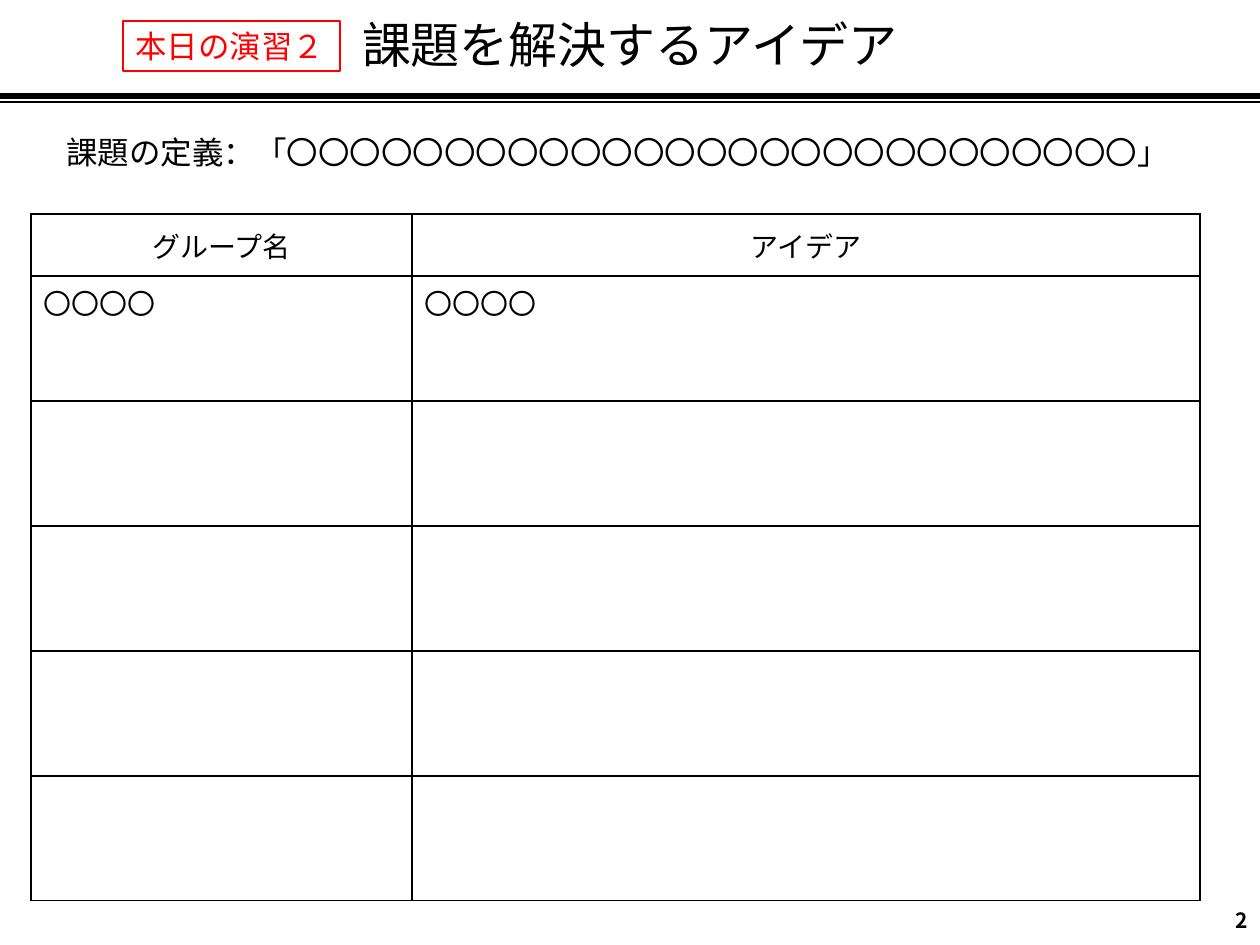
"""Build the exercise slide with a table of ideas from each group."""
import lxml.etree
import pptx
import pptx.dml.color
import pptx.enum.shapes
import pptx.enum.text
import pptx.oxml.ns
import pptx.util

SCALE = 914400 / 126
FONT = "Noto Sans CJK JP"
COLORS = {"ink": "000000", "accent": "FF0000"}
ALIGN = pptx.enum.text.PP_ALIGN
ANCHOR = pptx.enum.text.MSO_ANCHOR


def px(*lengths):
    return [pptx.util.Emu(round(length * SCALE)) for length in lengths]


def write(text_frame, text, size, color="ink", align=ALIGN.LEFT, bold=False):
    paragraph = text_frame.paragraphs[0]
    paragraph.alignment = align
    run = paragraph.add_run()
    run.text = text
    run.font.size = pptx.util.Pt(size)
    run.font.bold = bold
    run.font.color.rgb = pptx.dml.color.RGBColor.from_string(COLORS[color])
    run.font.name = FONT
    east_asian = lxml.etree.SubElement(run.font._element, pptx.oxml.ns.qn("a:ea"))
    east_asian.set("typeface", FONT)


presentation = pptx.Presentation()
presentation.slide_width, presentation.slide_height = px(1260, 945)
slide = presentation.slides.add_slide(presentation.slide_layouts[5])

title = slide.shapes.title
title.left, title.top, title.width, title.height = px(0, 0, 1260, 96)
title.text_frame.auto_size = pptx.enum.text.MSO_AUTO_SIZE.NONE
title.text_frame.vertical_anchor = ANCHOR.MIDDLE
write(title.text_frame, "課題を解決するアイデア", 28, align=ALIGN.CENTER)
title.text_frame.paragraphs[0].line_spacing = 0.9

page_number = slide.shapes.add_textbox(*px(1200, 895, 60, 50))
page_number.text_frame.word_wrap = True
page_number.text_frame.vertical_anchor = ANCHOR.MIDDLE
write(page_number.text_frame, "2", 12, align=ALIGN.RIGHT, bold=True)

for y, width in [(96, 3), (102, 1)]:
    rule = slide.shapes.add_connector(
        pptx.enum.shapes.MSO_CONNECTOR.STRAIGHT, *px(0, y, 1260, y))
    rule.line.color.rgb = pptx.dml.color.RGBColor.from_string(COLORS["ink"])
    rule.line.width = pptx.util.Pt(width)
    lxml.etree.SubElement(rule._element.spPr, pptx.oxml.ns.qn("a:effectLst"))

rows = [("グループ名", "アイデア"), ("〇〇〇〇", "〇〇〇〇")] + [("", "")] * 4
column_widths = px(381, 788)
row_heights = px(62, *[125] * 5)
table = slide.shapes.add_table(
    len(rows), 2, *px(31, 214), sum(column_widths), sum(row_heights)).table
table.first_row = False
table.horz_banding = False
for column, width in zip(table.columns, column_widths):
    column.width = width
for row, height in zip(table.rows, row_heights):
    row.height = height

for row_index, row_texts in enumerate(rows):
    for column_index, text in enumerate(row_texts):
        cell = table.cell(row_index, column_index)
        header = row_index == 0
        cell.vertical_anchor = ANCHOR.MIDDLE if header else ANCHOR.TOP
        if text:
            write(cell.text_frame, text, 16, align=ALIGN.CENTER if header else ALIGN.LEFT)
        properties = cell._tc.get_or_add_tcPr()
        for side in ("lnL", "lnR", "lnT", "lnB"):
            border = lxml.etree.SubElement(properties, pptx.oxml.ns.qn("a:" + side))
            border.set("w", str(pptx.util.Pt(1)))
            fill = lxml.etree.SubElement(border, pptx.oxml.ns.qn("a:solidFill"))
            color = lxml.etree.SubElement(fill, pptx.oxml.ns.qn("a:srgbClr"))
            color.set("val", COLORS["ink"])
        cell.fill.background()

definition = slide.shapes.add_textbox(*px(54, 127, 1171, 50))
definition.text_frame.word_wrap = True
write(definition.text_frame, "課題の定義：「〇〇〇〇〇〇〇〇〇〇〇〇〇〇〇〇〇〇〇〇〇〇〇〇〇〇〇」", 18)

exercise_label = slide.shapes.add_shape(
    pptx.enum.shapes.MSO_SHAPE.RECTANGLE, *px(123, 21, 217, 50))
exercise_label.shadow.inherit = False
exercise_label.fill.background()
exercise_label.line.color.rgb = pptx.dml.color.RGBColor.from_string(COLORS["accent"])
exercise_label.line.width = pptx.util.Pt(0.75)
exercise_label.text_frame.word_wrap = False
exercise_label.text_frame.vertical_anchor = ANCHOR.TOP
write(exercise_label.text_frame, "本日の演習２", 18, "accent")

presentation.save("out.pptx")
